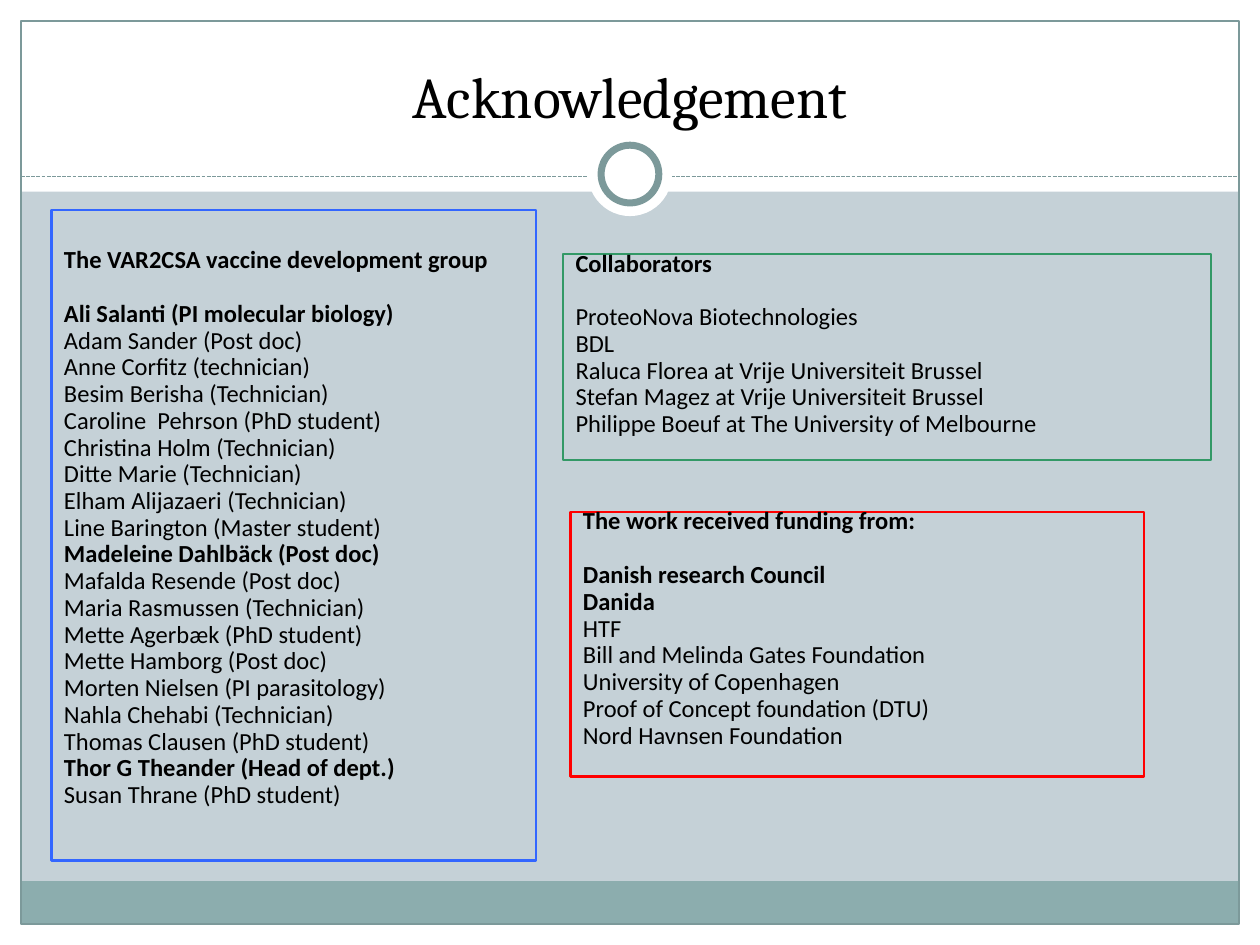
from dataclasses import dataclass

import pptx
import pptx.dml.color
import pptx.enum.dml
import pptx.enum.shapes
import pptx.enum.text
import pptx.oxml.ns
import pptx.util
from lxml import etree

Pt = pptx.util.Pt
SHAPE = pptx.enum.shapes.MSO_SHAPE
ANCHOR = pptx.enum.text.MSO_ANCHOR
ALIGN = pptx.enum.text.PP_ALIGN


@dataclass(frozen=True)
class Theme:
    """Colours, fonts and sizes of the slide."""
    background: str = "C5D1D7"
    paper: str = "FFFFFF"
    band: str = "8CADAE"
    accent: str = "7C999A"
    ink: str = "000000"
    group: str = "3366FF"
    partners: str = "339966"
    funding: str = "FF0000"
    title_font: str = "Cambria"
    body_font: str = "Calibri"
    title_size: float = 33
    body_size: float = 14
    line_pitch: float = 15.4
    paragraph_gap: float = 6.85


THEME = Theme()

GROUP = [
    ("The VAR2CSA vaccine development group", True),
    ("Ali Salanti (PI molecular biology)", True),
    ("Adam Sander (Post doc)", False),
    ("Anne Corfitz (technician)", False),
    ("Besim Berisha (Technician)", False),
    ("Caroline  Pehrson (PhD student)", False),
    ("Christina Holm (Technician)", False),
    ("Ditte Marie (Technician)", False),
    ("Elham Alijazaeri (Technician)", False),
    ("Line Barington (Master student)", False),
    ("Madeleine Dahlbäck (Post doc)", True),
    ("Mafalda Resende (Post doc)", False),
    ("Maria Rasmussen (Technician)", False),
    ("Mette Agerbæk (PhD student)", False),
    ("Mette Hamborg (Post doc)", False),
    ("Morten Nielsen (PI parasitology)", False),
    ("Nahla Chehabi (Technician)", False),
    ("Thomas Clausen (PhD student)", False),
    ("Thor G Theander (Head of dept.)", True),
    ("Susan Thrane (PhD student)", False),
]
PARTNERS = [
    ("Collaborators", True),
    ("ProteoNova Biotechnologies", False),
    ("BDL", False),
    ("Raluca Florea at Vrije Universiteit Brussel", False),
    ("Stefan Magez at Vrije Universiteit Brussel", False),
    ("Philippe Boeuf at The University of Melbourne", False),
]
FUNDING = [
    ("The work received funding from:", True),
    ("Danish research Council", True),
    ("Danida", True),
    ("HTF", False),
    ("Bill and Melinda Gates Foundation", False),
    ("University of Copenhagen", False),
    ("Proof of Concept foundation (DTU)", False),
    ("Nord Havnsen Foundation", False),
]


def rgb(value):
    """Return a colour object for a hex string."""
    return pptx.dml.color.RGBColor.from_string(value)


def add_shape(s, kind, box, fill=None, line=None, width=0.75):
    """Add a flat preset shape in the box."""
    sp = s.shapes.add_shape(kind, *map(Pt, box))
    sp.shadow.inherit = False
    if fill:
        sp.fill.solid()
        sp.fill.fore_color.rgb = rgb(fill)
    else:
        sp.fill.background()
    if line:
        sp.line.color.rgb = rgb(line)
        sp.line.width = Pt(width)
    else:
        sp.line.fill.background()
    return sp


def add_run(p, text, font, size, bold=False):
    """Add one styled run to a paragraph."""
    r = p.add_run()
    r.text = text
    r.font.name = font
    r.font.size = Pt(size)
    r.font.bold = bold
    r.font.color.rgb = rgb(THEME.ink)


def add_frame(s, box, margin=12):
    """Draw the white margins, footer band, border and dashed rule."""
    left, top, width, height = box
    right, bottom = left + width, top + height
    rule_y, header, footer = 100.8, 109.5, 24.5
    for edge in [
        (left, bottom - margin, width, margin),
        (left, top, width, header),
        (left, top, margin, height),
        (right - margin, top, margin, height),
    ]:
        add_shape(s, SHAPE.RECTANGLE, edge, THEME.paper)
    inner = width - 2 * margin
    band = (left + margin, bottom - margin - footer, inner, footer)
    add_shape(s, SHAPE.RECTANGLE, band, THEME.band)
    border = (left + margin, top + margin, inner, height - 2 * margin)
    add_shape(s, SHAPE.RECTANGLE, border, line=THEME.accent)
    rule = s.shapes.add_connector(
        pptx.enum.shapes.MSO_CONNECTOR.STRAIGHT,
        Pt(left + margin), Pt(top + rule_y), Pt(right - margin), Pt(top + rule_y))
    rule.line.color.rgb = rgb(THEME.accent)
    rule.line.width = Pt(0.75)
    rule.line.dash_style = pptx.enum.dml.MSO_LINE.SQUARE_DOT
    etree.SubElement(rule._element.spPr, pptx.oxml.ns.qn("a:effectLst"))


def add_ring(s, box, inset=7.5):
    """Draw the ring on its white disc."""
    left, top, width, height = box
    add_shape(s, SHAPE.OVAL, box, THEME.paper)
    ring = (left + inset, top + inset, width - 2 * inset, height - 2 * inset)
    add_shape(s, SHAPE.OVAL, ring, THEME.paper, THEME.accent, 4)


def add_panel(s, box, color, lines, lead=3.6):
    """Draw an outlined list with a gap below its heading."""
    sp = add_shape(s, SHAPE.RECTANGLE, box, line=color, width=1.25)
    tf = sp.text_frame
    tf.word_wrap = True
    tf.vertical_anchor = ANCHOR.TOP
    tf.margin_top = Pt(lead)
    for i, (text, bold) in enumerate(lines):
        p = tf.paragraphs[0] if i == 0 else tf.add_paragraph()
        p.alignment = ALIGN.LEFT
        p.line_spacing = 0.5
        p.space_before = Pt(THEME.paragraph_gap + (THEME.line_pitch if i == 1 else 0))
        add_run(p, text, THEME.body_font, THEME.body_size, bold)


def add_title(s, box, text):
    """Place the centred title on the bottom of the box."""
    tf = s.shapes.add_textbox(*map(Pt, box)).text_frame
    tf.word_wrap = True
    tf.vertical_anchor = ANCHOR.BOTTOM
    p = tf.paragraphs[0]
    p.alignment = ALIGN.CENTER
    add_run(p, text, THEME.title_font, THEME.title_size)


def main():
    """Build and save the slide."""
    prs = pptx.Presentation()
    prs.slide_width, prs.slide_height = Pt(720), Pt(540)
    s = prs.slides.add_slide(prs.slide_layouts[6])
    s.background.fill.solid()
    s.background.fill.fore_color.rgb = rgb(THEME.background)
    add_frame(s, (0, 0, 720, 540))
    add_ring(s, (336, 75.5, 48, 48))
    add_panel(s, (29.5, 119.8, 276.6, 372), THEME.group, GROUP, lead=27)
    add_panel(s, (321.8, 145.2, 370, 117.6), THEME.partners, PARTNERS)
    add_panel(s, (326, 292.6, 327.6, 151.2), THEME.funding, FUNDING)
    add_title(s, (24, 18, 672, 60), "Acknowledgement")
    prs.save("out.pptx")


if __name__ == "__main__":
    main()
